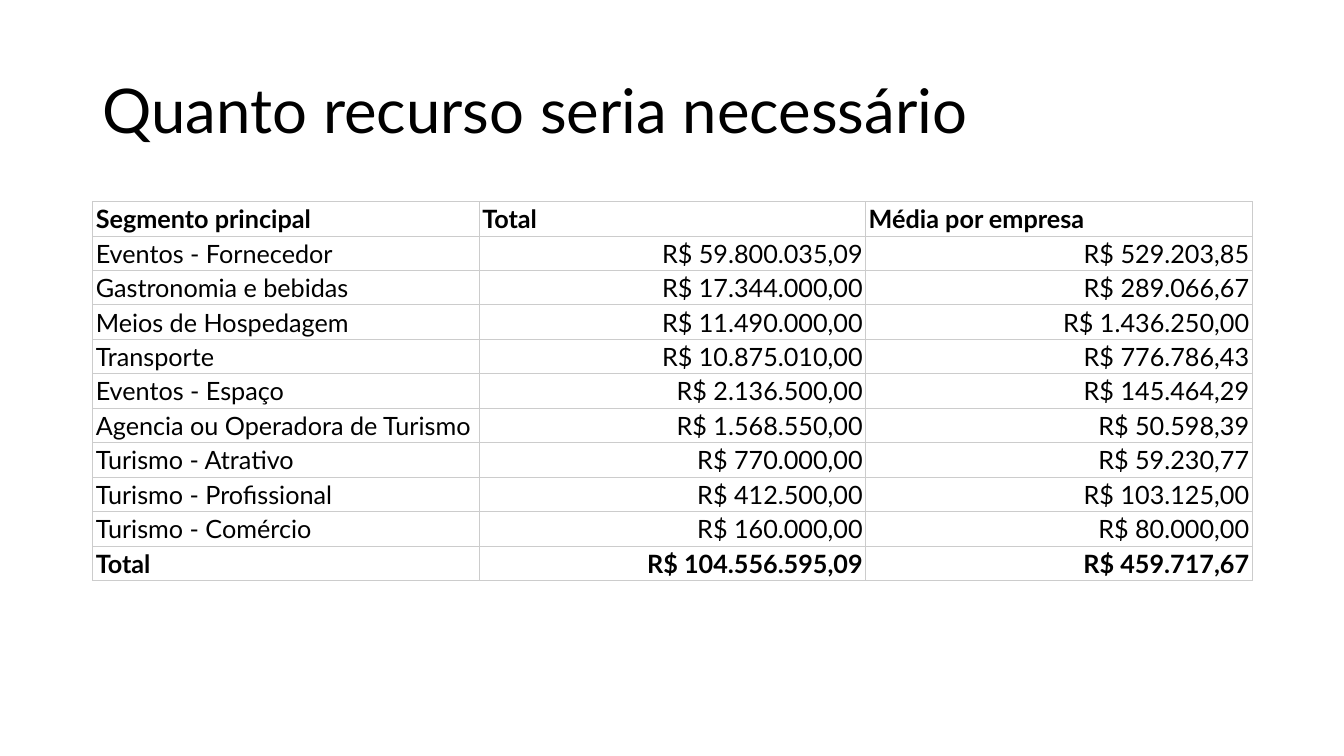
from dataclasses import dataclass

from lxml import etree
from pptx import Presentation
from pptx import util as u
from pptx.dml.color import RGBColor
from pptx.enum import text
from pptx.oxml import ns


@dataclass(frozen=True)
class Theme:
    """Colours, font and type sizes of the slide."""
    font: str = "Lato"
    ink: str = "000000"
    rule: str = "CCCCCC"
    rule_pt: float = 0.75
    title_pt: int = 44
    body_pt: int = 18


THEME = Theme()
TITLE = "Quanto recurso seria necessário"
ROWS = [
    ("Segmento principal", "Total", "Média por empresa"),
    ("Eventos - Fornecedor", "R$ 59.800.035,09", "R$ 529.203,85"),
    ("Gastronomia e bebidas", "R$ 17.344.000,00", "R$ 289.066,67"),
    ("Meios de Hospedagem", "R$ 11.490.000,00", "R$ 1.436.250,00"),
    ("Transporte", "R$ 10.875.010,00", "R$ 776.786,43"),
    ("Eventos - Espaço", "R$ 2.136.500,00", "R$ 145.464,29"),
    ("Agencia ou Operadora de Turismo", "R$ 1.568.550,00", "R$ 50.598,39"),
    ("Turismo - Atrativo", "R$ 770.000,00", "R$ 59.230,77"),
    ("Turismo - Profissional", "R$ 412.500,00", "R$ 103.125,00"),
    ("Turismo - Comércio", "R$ 160.000,00", "R$ 80.000,00"),
    ("Total", "R$ 104.556.595,09", "R$ 459.717,67"),
]


def write(tf, content, size, bold=False, align=text.PP_ALIGN.LEFT, spacing=1.0):
    """Write one formatted paragraph into a text frame."""
    p = tf.paragraphs[0]
    p.alignment = align
    p.line_spacing = spacing
    r = p.add_run()
    r.text = content
    r.font.name = THEME.font
    r.font.size = u.Pt(size)
    r.font.bold = bold
    r.font.color.rgb = RGBColor.from_string(THEME.ink)


def add_borders(cell):
    """Draw a thin rule on all four sides of a cell."""
    tc_pr = cell._tc.get_or_add_tcPr()
    for side in ("lnL", "lnR", "lnT", "lnB"):
        ln = etree.SubElement(tc_pr, ns.qn(f"a:{side}"), w=str(u.Pt(THEME.rule_pt)))
        fill = etree.SubElement(ln, ns.qn("a:solidFill"))
        etree.SubElement(fill, ns.qn("a:srgbClr"), val=THEME.rule)


def add_title(s, left, top, width, height):
    """Place the slide title, centred vertically in its box."""
    tf = s.shapes.add_textbox(left, top, width, height).text_frame
    tf.word_wrap = True
    tf.vertical_anchor = text.MSO_ANCHOR.MIDDLE
    write(tf, TITLE, THEME.title_pt, spacing=0.9)


def add_funding_table(s, left, top, width, height):
    """Place the table of funds needed, with equal rows and columns."""
    frame = s.shapes.add_table(len(ROWS), len(ROWS[0]), left, top, width, height)
    table = frame.table
    table.first_row = table.horz_banding = False
    last = len(ROWS) - 1
    for i, row in enumerate(ROWS):
        for j, content in enumerate(row):
            cell = table.cell(i, j)
            cell.margin_left = cell.margin_right = u.Inches(0.03)
            cell.margin_top = cell.margin_bottom = u.Inches(0.02)
            cell.vertical_anchor = text.MSO_ANCHOR.BOTTOM
            add_borders(cell)
            cell.fill.background()
            is_amount = i > 0 and j > 0
            write(cell.text_frame, content, THEME.body_pt, bold=i in (0, last),
                  align=text.PP_ALIGN.RIGHT if is_amount else text.PP_ALIGN.LEFT)


def main():
    """Build the slide and save it."""
    prs = Presentation()
    prs.slide_width, prs.slide_height = u.Inches(13.33), u.Inches(7.5)
    s = prs.slides.add_slide(prs.slide_layouts[6])
    left, width = u.Inches(0.92), u.Inches(11.5)
    add_title(s, left, u.Inches(0.4), width, u.Inches(1.45))
    add_funding_table(s, left, u.Inches(2), width, u.Inches(3.76))
    prs.save("out.pptx")


if __name__ == "__main__":
    main()
